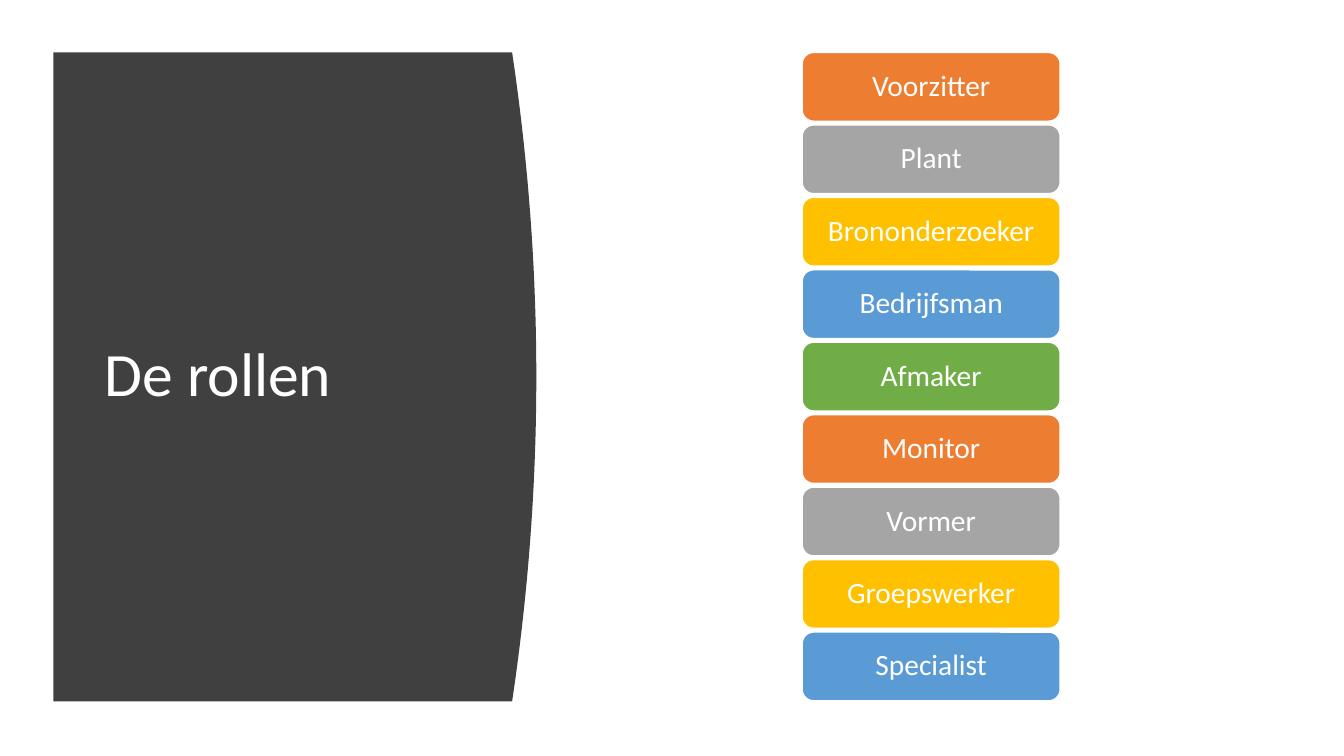
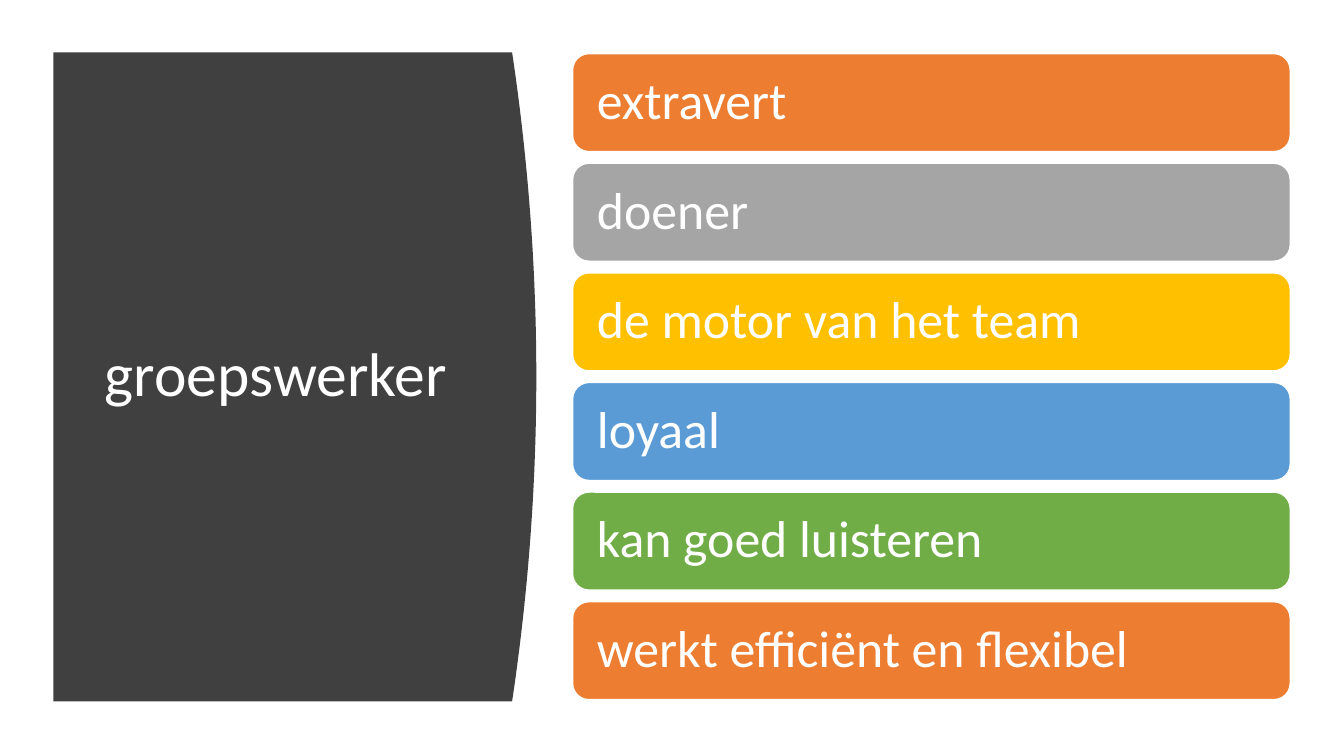
import pptx
import pptx.dml.color
import pptx.enum.shapes
import pptx.enum.text
import pptx.util

Pt = pptx.util.Pt
ALIGN = pptx.enum.text.PP_ALIGN
FONT = "Calibri"
WHITE = "FFFFFF"
PANEL_COLOUR = "404040"
BAR_COLOURS = ["ED7D31", "A5A5A5", "FFC000", "5B9BD5", "70AD47"]
PANEL_LEFT, PANEL_TOP, PANEL_BOTTOM = 38.2, 37.4, 501.1
PANEL_EDGE, PANEL_BULGE = 365.8, 17.3
CURVE_STEPS = 48

ROLES = ["Voorzitter", "Plant", "Brononderzoeker", "Bedrijfsman", "Afmaker",
         "Monitor", "Vormer", "Groepswerker", "Specialist"]
TRAITS = ["extravert", "doener", "de motor van het team", "loyaal",
          "kan goed luisteren", "werkt efficiënt en flexibel"]


def colour(value):
    return pptx.dml.color.RGBColor.from_string(value)


def write_text(box, text, size, align=ALIGN.LEFT, inset=7.2):
    frame = box.text_frame
    frame.word_wrap = True
    frame.auto_size = pptx.enum.text.MSO_AUTO_SIZE.NONE
    frame.vertical_anchor = pptx.enum.text.MSO_ANCHOR.MIDDLE
    frame.margin_left = frame.margin_right = Pt(inset)
    frame.margin_top = frame.margin_bottom = Pt(3.6)
    para = frame.paragraphs[0]
    para.alignment = align
    para.line_spacing = 0.9
    span = para.add_run()
    span.text = text
    span.font.name = FONT
    span.font.size = Pt(size)
    span.font.color.rgb = colour(WHITE)


def add_panel(page):
    outline = [(PANEL_LEFT, PANEL_TOP)]
    for step in range(CURVE_STEPS + 1):
        share = step / CURVE_STEPS
        x = PANEL_EDGE + PANEL_BULGE * 4 * share * (1 - share)
        outline.append((x, PANEL_TOP + share * (PANEL_BOTTOM - PANEL_TOP)))
    outline.append((PANEL_LEFT, PANEL_BOTTOM))
    points = [(Pt(x), Pt(y)) for x, y in outline]
    builder = page.shapes.build_freeform(*points[0], scale=1.0)
    builder.add_line_segments(points[1:], close=True)
    panel = builder.convert_to_shape()
    panel.shadow.inherit = False
    panel.fill.solid()
    panel.fill.fore_color.rgb = colour(PANEL_COLOUR)
    panel.line.fill.background()
    return panel


def add_titled_page(deck, text):
    page = deck.slides.add_slide(deck.slide_layouts[5])
    title = page.shapes.title
    title.left, title.top = Pt(67.7), Pt(80)
    title.width, title.height = Pt(269.3), Pt(377.3)
    write_text(title, text, 44)
    title.element.addprevious(add_panel(page).element)
    return page


def add_bars(page, labels, left, top, width, height, pitch, **text_format):
    for index, label in enumerate(labels):
        bar = page.shapes.add_shape(
            pptx.enum.shapes.MSO_SHAPE.ROUNDED_RECTANGLE,
            Pt(left), Pt(top + index * pitch), Pt(width), Pt(height))
        bar.shadow.inherit = False
        bar.fill.solid()
        bar.fill.fore_color.rgb = colour(BAR_COLOURS[index % len(BAR_COLOURS)])
        bar.line.color.rgb = colour(WHITE)
        bar.line.width = Pt(1)
        write_text(bar, label, **text_format)


def main():
    deck = pptx.Presentation()
    deck.slide_width, deck.slide_height = Pt(960), Pt(540)

    roles_page = add_titled_page(deck, "De rollen")
    add_bars(roles_page, ROLES, left=573, top=37.5, width=184.3, height=49.1,
             pitch=51.75, size=21, align=ALIGN.CENTER, inset=9)

    traits_page = add_titled_page(deck, "groepswerker")
    add_bars(traits_page, TRAITS, left=409, top=38.3, width=512.6, height=70,
             pitch=78.3, size=37, inset=14)

    deck.save("out.pptx")


if __name__ == "__main__":
    main()
